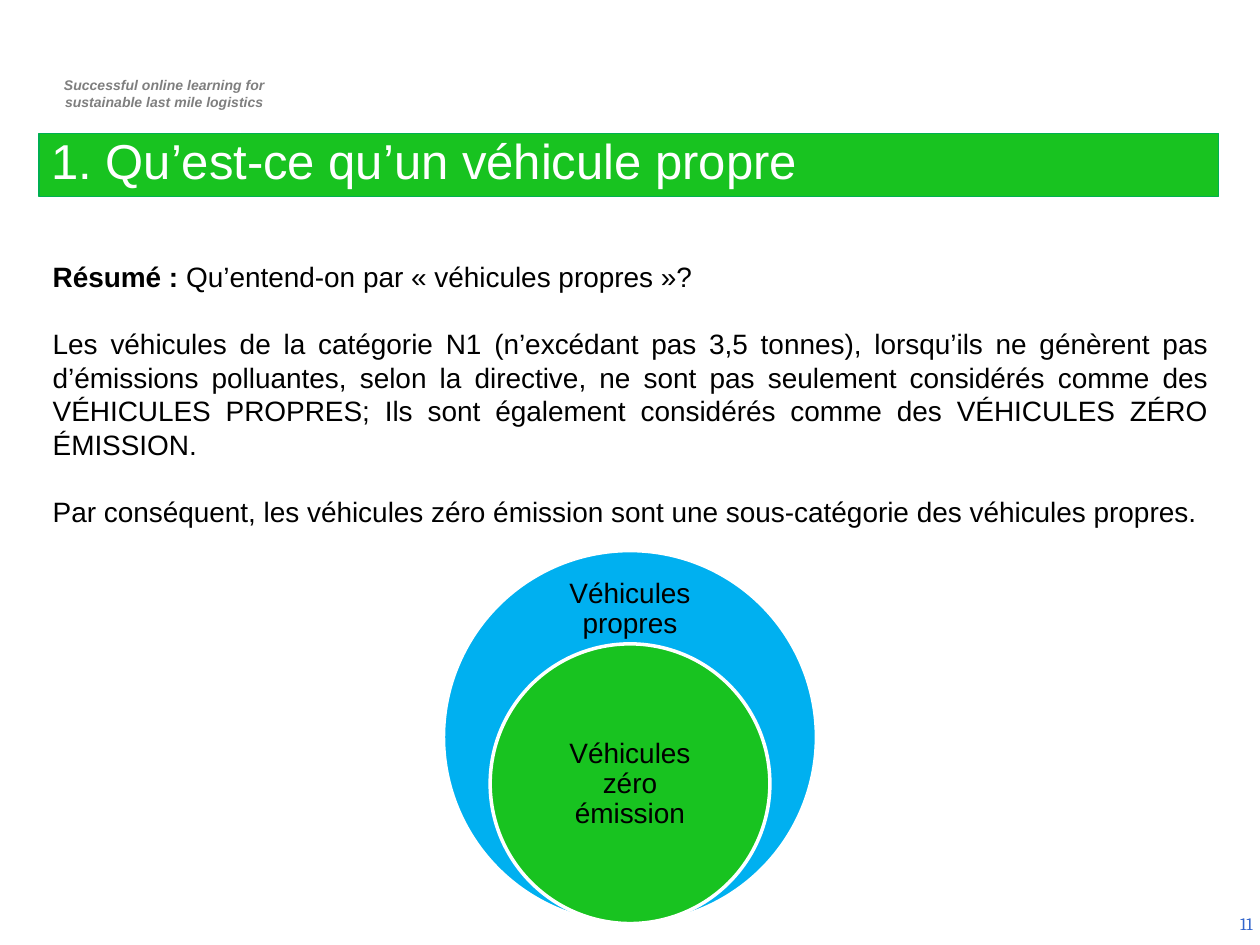
from pptx import Presentation
from pptx.dml.color import RGBColor
from pptx.enum.shapes import MSO_SHAPE
from pptx.enum.text import MSO_ANCHOR, PP_ALIGN
from pptx.util import Inches, Pt

GREEN = RGBColor(0x18, 0xC3, 0x20)
DARK_GREEN = RGBColor(0x00, 0xB0, 0x50)
BLUE = RGBColor(0x00, 0xB0, 0xF0)
LINK_BLUE = RGBColor(0x33, 0x66, 0xCC)
GRAY = RGBColor(0x7F, 0x7F, 0x7F)
BLACK = RGBColor(0x00, 0x00, 0x00)
WHITE = RGBColor(0xFF, 0xFF, 0xFF)
LEFT, CENTER, RIGHT, JUSTIFY = PP_ALIGN.LEFT, PP_ALIGN.CENTER, PP_ALIGN.RIGHT, PP_ALIGN.JUSTIFY
TOP, MIDDLE, BOTTOM = MSO_ANCHOR.TOP, MSO_ANCHOR.MIDDLE, MSO_ANCHOR.BOTTOM
RECTANGLE, OVAL = MSO_SHAPE.RECTANGLE, MSO_SHAPE.OVAL

deck = Presentation()
deck.slide_width, deck.slide_height = Inches(10), Inches(7.5)
page = deck.slides.add_slide(deck.slide_layouts[6])


def add_shape(kind, left, top, width, height, fill, line, weight):
    shape = page.shapes.add_shape(kind, Inches(left), Inches(top), Inches(width), Inches(height))
    shape.shadow.inherit = False
    shape.fill.solid()
    shape.fill.fore_color.rgb = fill
    shape.line.color.rgb = line
    shape.line.width = Pt(weight)
    return shape


def write(box, paragraphs, size, color=BLACK, font="Arial", align=LEFT, anchor=TOP,
          bold=False, italic=False, spacing=None, gap=0):
    """Fill a box; each paragraph is a list of (text, bold) spans or a plain string."""
    frame = box.text_frame
    frame.word_wrap = True
    frame.vertical_anchor = anchor
    for index, content in enumerate(paragraphs):
        para = frame.paragraphs[0] if index == 0 else frame.add_paragraph()
        para.alignment = align
        para.line_spacing = spacing
        para.space_before = Pt(gap if index else 0)
        spans = [(content, bold)] if isinstance(content, str) else content
        for text, span_bold in spans:
            span = para.add_run()
            span.text = text
            span.font.name, span.font.size = font, Pt(size)
            span.font.bold, span.font.italic = span_bold, italic
            span.font.color.rgb = color
    return frame


tagline = page.shapes.add_textbox(Inches(0.29), Inches(0.56), Inches(2.03), Inches(0.37))
write(tagline, ["Successful online learning for", "sustainable last mile logistics"],
      8, GRAY, align=CENTER, bold=True, italic=True)

page_number = page.shapes.add_textbox(Inches(7.71), Inches(7.13), Inches(2.33), Inches(0.4))
write(page_number, ["11"], 10, LINK_BLUE, font="Cambria", align=RIGHT, anchor=MIDDLE)

title = add_shape(RECTANGLE, 0.31, 1.06, 9.36, 0.5, GREEN, DARK_GREEN, 0.75)
write(title, ["1. Qu’est-ce qu’un véhicule propre"], 28, WHITE, anchor=BOTTOM, spacing=0.9)

summary = page.shapes.add_textbox(Inches(0.32), Inches(1.74), Inches(9.37), Inches(2.79))
frame = write(summary, [
    [("Résumé : ", True), ("Qu’entend-on par « véhicules propres »?", False)],
    "Les véhicules de la catégorie N1 (n’excédant pas 3,5 tonnes), lorsqu’ils ne génèrent pas "
    "d’émissions polluantes, selon la directive, ne sont pas seulement considérés comme des "
    "VÉHICULES PROPRES; Ils sont également considérés comme des VÉHICULES ZÉRO ÉMISSION.",
    "Par conséquent, les véhicules zéro émission sont une sous-catégorie des véhicules propres.",
], 16, align=JUSTIFY, gap=19.2)
frame.margin_top = Inches(0.32)

# Nested circles share a vertical axis and a bottom edge
AXIS, BASE = 5, 7.33
CIRCLES = [
    (2.96, BLUE, "Véhicules propres", 4.59, 0.5),
    (2.22, GREEN, "Véhicules zéro émission", 5.67, 1.11),
]
LABEL_WIDTH = 1.56
for diameter, fill, text, label_top, label_height in CIRCLES:
    add_shape(OVAL, AXIS - diameter / 2, BASE - diameter, diameter, diameter, fill, WHITE, 2)
    label = page.shapes.add_textbox(Inches(AXIS - LABEL_WIDTH / 2), Inches(label_top),
                                    Inches(LABEL_WIDTH), Inches(label_height))
    frame = write(label, [text], 16, align=CENTER, anchor=MIDDLE, spacing=0.9)
    frame.margin_left = frame.margin_right = Inches(0.12)
    frame.margin_top = frame.margin_bottom = Inches(0.12)

deck.save("out.pptx")
